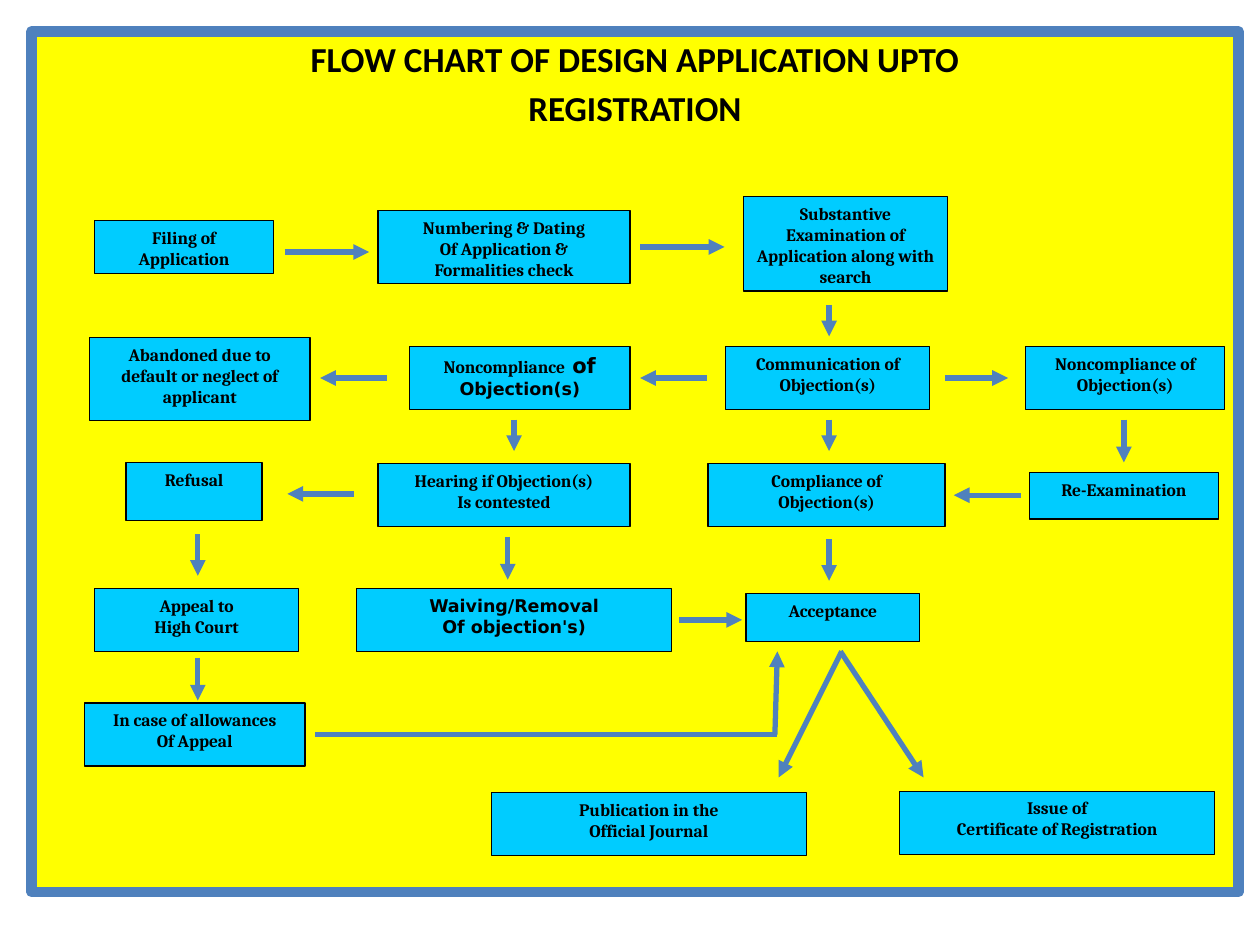
from pptx import Presentation
from pptx.dml.color import RGBColor
from pptx.enum import shapes, text
from pptx.oxml import ns
from pptx.util import Inches, Pt
from lxml import etree

THEME = {
    "page": "FFFF00", "box": "00CCFF", "ink": "000000", "line": "4F81BD",
    "title": ("Calibri", 20), "serif": ("Cambria", 10),
    "sans": ("DejaVu Sans", 10), "large": ("DejaVu Sans", 12),
    "frame": 6, "edge": 0.75, "arrow": 3, "gap": 4,
}

TITLE = ["FLOW CHART OF DESIGN APPLICATION UPTO", "REGISTRATION"]
FRAME = (0.25, 0.25, 9.58, 6.83)

# left, top, width, height, lines; a line is a string or (words, style) runs
STEPS = [
    (0.75, 1.75, 1.42, 0.42, ["Filing of", "Application"]),
    (3, 1.67, 2, 0.58, ["Numbering & Dating", "Of Application &", "Formalities check"]),
    (5.9, 1.56, 1.62, 0.75, ["Substantive", "Examination of", "Application along with search"]),
    (0.71, 2.68, 1.75, 0.66, ["Abandoned due to default or neglect of applicant"]),
    (3.25, 2.75, 1.75, 0.5, [[("Noncompliance", "serif"), (" of", "large")],
                             [("Objection(s)", "sans")]]),
    (5.76, 2.75, 1.62, 0.5, ["Communication of", "Objection(s)"]),
    (8.14, 2.75, 1.58, 0.5, ["Noncompliance of", "Objection(s)"]),
    (1, 3.67, 1.08, 0.46, ["Refusal"]),
    (3, 3.68, 2, 0.5, ["Hearing if Objection(s)", "Is contested"]),
    (5.62, 3.68, 1.88, 0.5, ["Compliance of", "Objection(s)"]),
    (8.17, 3.75, 1.5, 0.37, ["Re-Examination"]),
    (0.75, 4.67, 1.62, 0.5, ["Appeal to", "High Court"]),
    (2.83, 4.67, 2.5, 0.5, [[("Waiving/Removal", "sans")], [("Of objection's)", "sans")]]),
    (5.92, 4.71, 1.38, 0.38, ["Acceptance"]),
    (0.67, 5.58, 1.75, 0.5, ["In case of allowances", "Of Appeal"]),
    (3.9, 6.29, 2.5, 0.5, ["Publication in the", "Official Journal"]),
    (7.14, 6.28, 2.5, 0.5, ["Issue of", "Certificate of Registration"]),
]

ACROSS = [(2.26, 2, 0.67), (5.08, 1.96, 0.67), (3.07, 3, -0.53), (5.61, 3, -0.53),
          (7.5, 3, 0.5), (2.81, 3.92, -0.53), (8.1, 3.93, -0.53), (5.39, 4.92, 0.5)]
DOWN = [(6.58, 2.42, 0.25), (4.08, 3.33, 0.25), (6.58, 3.33, 0.25), (8.92, 3.33, 0.34),
        (1.57, 4.24, 0.33), (4.03, 4.26, 0.34), (6.58, 4.28, 0.33), (1.57, 5.22, 0.34)]
SLANTED = [(6.15, 5.83, 6.17, 5.17), (6.68, 5.17, 6.18, 6.17), (6.67, 5.17, 7.33, 6.17)]
RETURN = (2.5, 5.83, 6.17, 5.83)


def tint(name):
    """Give a theme colour."""
    return RGBColor.from_string(THEME[name])


def box(slide, place, lines, style="serif", fill="box", line="ink", edge="edge", gap=0):
    """Draw a filled rectangle holding centred bold lines."""
    shape = slide.shapes.add_shape(shapes.MSO_SHAPE.RECTANGLE, *map(Inches, place))
    shape.shadow.inherit = False
    shape.fill.solid()
    shape.fill.fore_color.rgb = tint(fill)
    shape.line.color.rgb = tint(line)
    shape.line.width = Pt(THEME[edge])
    frame = shape.text_frame
    frame.word_wrap = True
    frame.vertical_anchor = text.MSO_ANCHOR.TOP
    for i, row in enumerate(lines):
        para = frame.add_paragraph() if i else frame.paragraphs[0]
        para.alignment = text.PP_ALIGN.CENTER
        para.space_before = Pt(gap)
        for words, look in [(row, style)] if isinstance(row, str) else row:
            run = para.add_run()
            run.text = words
            run.font.name, size = THEME[look]
            run.font.size = Pt(size)
            run.font.bold = True
            run.font.color.rgb = tint("ink")


def arrow(slide, ends, head=True):
    """Draw a straight line, with a triangle at its far end if asked."""
    link = slide.shapes.add_connector(shapes.MSO_CONNECTOR.STRAIGHT, *map(Inches, ends))
    link.line.color.rgb = tint("line")
    link.line.width = Pt(THEME["arrow"])
    if head:
        tail = etree.SubElement(link.line._get_or_add_ln(), ns.qn("a:tailEnd"))
        tail.set("type", "triangle")
    etree.SubElement(link._element.spPr, ns.qn("a:effectLst"))


def main():
    """Build the flow chart slide."""
    deck = Presentation()
    deck.slide_width, deck.slide_height = Inches(10), Inches(7.5)
    slide = deck.slides.add_slide(deck.slide_layouts[6])
    box(slide, FRAME, TITLE, "title", "page", "line", "frame", THEME["gap"])
    for *place, lines in STEPS:
        box(slide, place, lines)
    flat = [(x, y, x + run, y) for x, y, run in ACROSS]
    drop = [(x, y, x, y + run) for x, y, run in DOWN]
    arrow(slide, RETURN, head=False)
    for ends in flat + drop + SLANTED:
        arrow(slide, ends)
    deck.save("out.pptx")


if __name__ == "__main__":
    main()
